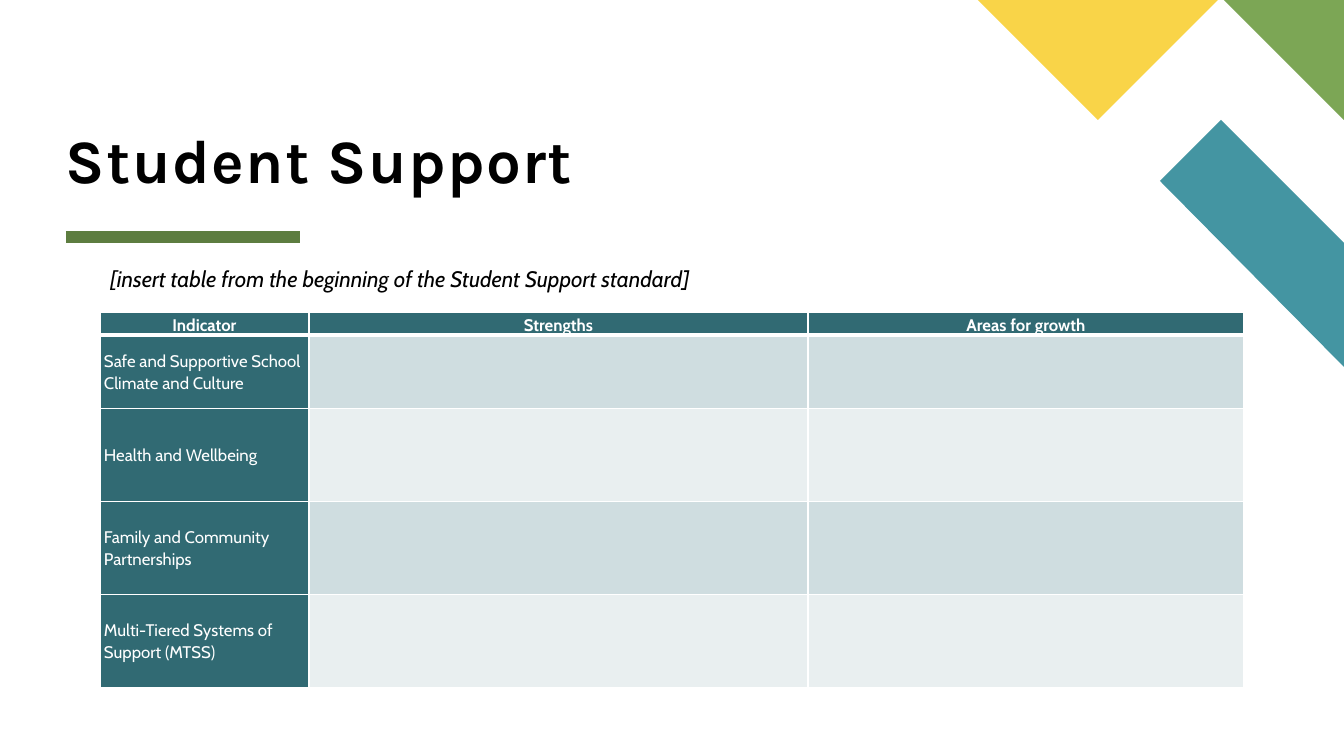
from lxml import etree
from pptx import Presentation
from pptx import util as u
from pptx.dml.color import RGBColor
from pptx.enum import shapes, text
from pptx.oxml import ns

BLACK = RGBColor(0x00, 0x00, 0x00)
WHITE = RGBColor(0xFF, 0xFF, 0xFF)
TEAL = RGBColor(0x44, 0x95, 0xA2)
GREEN = RGBColor(0x7C, 0xA6, 0x55)
YELLOW = RGBColor(0xF9, 0xD4, 0x48)
MOSS = RGBColor(0x5D, 0x7D, 0x40)
DEEP = RGBColor(0x31, 0x6A, 0x73)
BANDS = [RGBColor(0xCF, 0xDD, 0xE0), RGBColor(0xE9, 0xEF, 0xF0)]

HEADS = ["Indicator", "Strengths", "Areas for growth"]
TOPICS = [
    "Safe and Supportive School Climate and Culture",
    "Health and Wellbeing",
    "Family and Community Partnerships",
    "Multi-Tiered Systems of Support (MTSS)",
]


class Deck:
    """Holds the style and the current slide, and draws each kind of element."""

    scale = 914400 / 100.8
    body = "Cabin"
    title = "Karla"

    def __init__(self, wide, high):
        self.prs = Presentation()
        self.prs.slide_width = self.px(wide)
        self.prs.slide_height = self.px(high)
        self.slide = self.prs.slides.add_slide(self.prs.slide_layouts[6])

    def px(self, size):
        return u.Emu(round(size * self.scale))

    def font(self, para, name, size, color, bold=False, slant=False):
        font = para.font
        font.name, font.size, font.bold, font.italic = name, u.Pt(size), bold, slant
        font.color.rgb = color

    def patch(self, points, color):
        pen = self.slide.shapes.build_freeform(*points[0], scale=self.scale)
        pen.add_line_segments(points[1:], close=True)
        shape = pen.convert_to_shape()
        shape.shadow.inherit = False
        shape.fill.solid()
        shape.fill.fore_color.rgb = color
        shape.line.fill.background()

    def rule(self, left, right, top, color, points):
        ends = map(self.px, (left, top, right, top))
        line = self.slide.shapes.add_connector(shapes.MSO_CONNECTOR.STRAIGHT, *ends)
        line.line.color.rgb = color
        line.line.width = u.Pt(points)
        etree.SubElement(line._element.spPr, ns.qn("a:effectLst"))

    def text(self, box, words, name, size, anchor, pad=0, **look):
        frame = self.slide.shapes.add_textbox(*map(self.px, box)).text_frame
        frame.word_wrap = True
        frame.vertical_anchor = anchor
        frame.margin_left = frame.margin_right = 0
        frame.margin_top = frame.margin_bottom = self.px(pad)
        para = frame.paragraphs[0]
        para.add_run().text = words
        self.font(para, name, size, BLACK, **look)
        return para

    def edge(self, cell, low):
        props = cell._tc.get_or_add_tcPr()
        for spot, side in enumerate("LRTB"):
            width = u.Pt(low if side == "B" else 1)
            line = etree.Element(ns.qn(f"a:ln{side}"), w=str(width))
            fill = etree.SubElement(line, ns.qn("a:solidFill"))
            etree.SubElement(fill, ns.qn("a:srgbClr"), val=str(WHITE))
            props.insert(spot, line)

    def cell(self, cell, words, color, head):
        cell.fill.solid()
        cell.fill.fore_color.rgb = color
        self.edge(cell, 3 if head else 1)
        if not words:
            return
        cell.margin_left = cell.margin_right = self.px(4)
        cell.margin_top = cell.margin_bottom = 0
        anchor = text.MSO_ANCHOR
        cell.vertical_anchor = anchor.TOP if head else anchor.MIDDLE
        cell.text = words
        para = cell.text_frame.paragraphs[0]
        para.alignment = text.PP_ALIGN.CENTER if head else text.PP_ALIGN.LEFT
        para.line_spacing = 1.15 if head else 1.07
        para.space_before = para.space_after = u.Pt(2)
        self.font(para, self.body, 12, WHITE, bold=head)

    def table(self, left, top, cols, rows, data):
        box = map(self.px, (left, top, sum(cols), sum(rows)))
        grid = self.slide.shapes.add_table(len(rows), len(cols), *box).table
        for col, wide in zip(grid.columns, cols):
            col.width = self.px(wide)
        for i, (row, high) in enumerate(zip(grid.rows, rows)):
            row.height = self.px(high)
            for j, cell in enumerate(row.cells):
                color = BANDS[(i - 1) % 2] if i and j else DEEP
                self.cell(cell, data[i][j], color, i == 0)


def main():
    deck = Deck(1344, 756)
    deck.patch([(1344, 367), (1344, 243), (1221, 120), (1160, 181)], TEAL)
    deck.patch([(1344, 120), (1344, 0), (1224, 0)], GREEN)
    deck.patch([(978, 0), (1098, 120), (1218, 0)], YELLOW)
    deck.rule(66, 300, 237, MOSS, 8)

    title = deck.text((66, 22, 1210, 173), "Student Support", deck.title, 44,
                      text.MSO_ANCHOR.BOTTOM, bold=True)
    title.line_spacing = 0.8
    title.runs[0].font._element.set("spc", "100")

    hint = deck.text((110, 260, 1156, 40),
                     "[insert table from the beginning of the Student Support standard]",
                     deck.body, 16, text.MSO_ANCHOR.TOP, pad=5, slant=True)
    hint.space_before = u.Pt(6)

    data = [HEADS] + [[topic, "", ""] for topic in TOPICS]
    deck.table(100, 312, [209, 499, 436], [23, 73] + [93] * 3, data)
    deck.prs.save("out.pptx")


if __name__ == "__main__":
    main()
